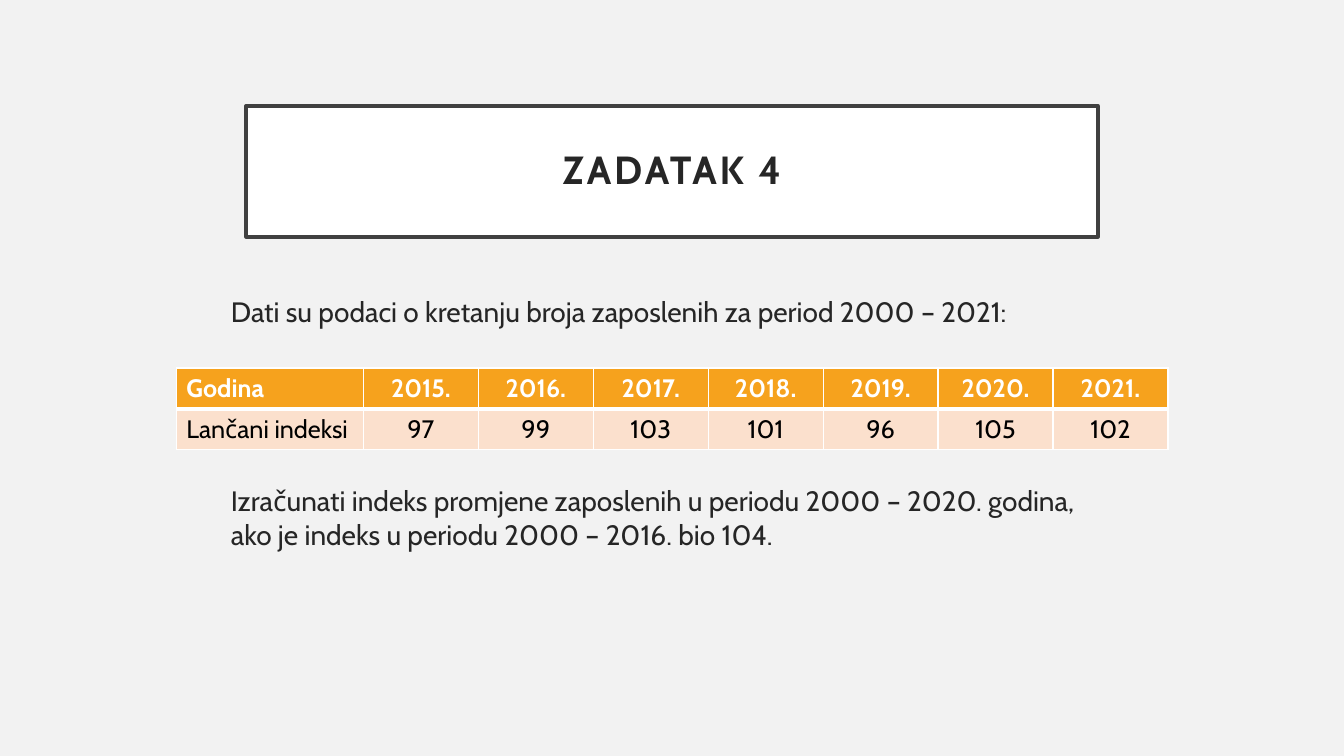
from lxml import etree
from pptx import Presentation
from pptx.dml.color import RGBColor
from pptx.enum.text import MSO_ANCHOR, PP_ALIGN
from pptx.oxml.ns import qn
from pptx.util import Pt

# Content
TITLE = "ZADATAK 4"
TASK = [
    "Dati su podaci o kretanju broja zaposlenih za period 2000 – 2021:",
    "Izračunati indeks promjene zaposlenih u periodu 2000 – 2020. godina, "
    "ako je indeks u periodu 2000 – 2016. bio 104.",
]
INDEX_ROWS = [
    ["Godina", "2015.", "2016.", "2017.", "2018.", "2019.", "2020.", "2021."],
    ["Lančani indeksi", "97", "99", "103", "101", "96", "105", "102"],
]

# Style
FONT = "Cabin"
BACKGROUND = RGBColor(0xF2, 0xF2, 0xF2)
WHITE = RGBColor(0xFF, 0xFF, 0xFF)
BLACK = RGBColor(0, 0, 0)
FRAME = RGBColor(0x40, 0x40, 0x40)
TEXT = RGBColor(0x26, 0x26, 0x26)
ORANGE = RGBColor(0xF6, 0xA2, 0x1D)
PEACH = RGBColor(0xFB, 0xE0, 0xCD)
CENTER, LEFT = PP_ALIGN.CENTER, PP_ALIGN.LEFT
MIDDLE = MSO_ANCHOR.MIDDLE

# Layout in points
LABEL_WIDTH, YEAR_WIDTH, ROW_HEIGHT = 133.6, 82.1, 29.2
TABLE_GAP = 111.4  # room for the table between the two paragraphs


def set_font(paragraph, size, color, bold=False):
    font = paragraph.font
    font.name, font.size, font.bold = FONT, Pt(size), bold
    font.color.rgb = color


def add_border(cell, side, width):
    properties = cell._tc.get_or_add_tcPr()
    line = etree.SubElement(properties, qn(f"a:ln{side}"), w=str(int(Pt(width))))
    fill = etree.SubElement(line, qn("a:solidFill"))
    etree.SubElement(fill, qn("a:srgbClr"), val=str(WHITE))


presentation = Presentation()
presentation.slide_width, presentation.slide_height = Pt(960), Pt(540)
slide = presentation.slides.add_slide(presentation.slide_layouts[5])
slide.background.fill.solid()
slide.background.fill.fore_color.rgb = BACKGROUND

# Framed title
title = slide.shapes.title
title.left, title.top, title.width, title.height = Pt(175.8), Pt(75.6), Pt(608.4), Pt(93.6)
title.fill.solid()
title.fill.fore_color.rgb = WHITE
title.line.color.rgb = FRAME
title.line.width = Pt(2.5)
title.text_frame.text = TITLE
title.text_frame.vertical_anchor = MIDDLE
paragraph = title.text_frame.paragraphs[0]
paragraph.alignment = CENTER
paragraph.line_spacing = 0.9
set_font(paragraph, 28, TEXT, bold=True)
paragraph.runs[0].font._element.set("spc", "200")

# Task text above and below the table
task_box = slide.shapes.add_textbox(Pt(157.8), Pt(206.6), Pt(644.4), Pt(247.7))
task_frame = task_box.text_frame
task_frame.word_wrap = True
task_frame.text = "\n".join(TASK)
for paragraph in task_frame.paragraphs:
    set_font(paragraph, 20, TEXT)
task_frame.paragraphs[1].space_before = Pt(TABLE_GAP)

# Chain index table
row_count, column_count = len(INDEX_ROWS), len(INDEX_ROWS[0])
table_width = LABEL_WIDTH + YEAR_WIDTH * (column_count - 1)
table = slide.shapes.add_table(
    row_count, column_count, Pt(126), Pt(262.8),
    Pt(table_width), Pt(ROW_HEIGHT * row_count)).table
table.horz_banding = False
for index, column in enumerate(table.columns):
    column.width = Pt(YEAR_WIDTH if index else LABEL_WIDTH)
for row_index, values in enumerate(INDEX_ROWS):
    header = row_index == 0
    table.rows[row_index].height = Pt(ROW_HEIGHT)
    for column_index, value in enumerate(values):
        cell = table.cell(row_index, column_index)
        for side in "LRTB":
            header_rule = (header and side == "B") or (not header and side == "T")
            add_border(cell, side, 3 if header_rule else 1)
        cell.fill.solid()
        cell.fill.fore_color.rgb = ORANGE if header else PEACH
        cell.text = value
        paragraph = cell.text_frame.paragraphs[0]
        paragraph.alignment = CENTER if column_index else LEFT
        set_font(paragraph, 18, WHITE if header else BLACK, bold=header)

presentation.save("out.pptx")
